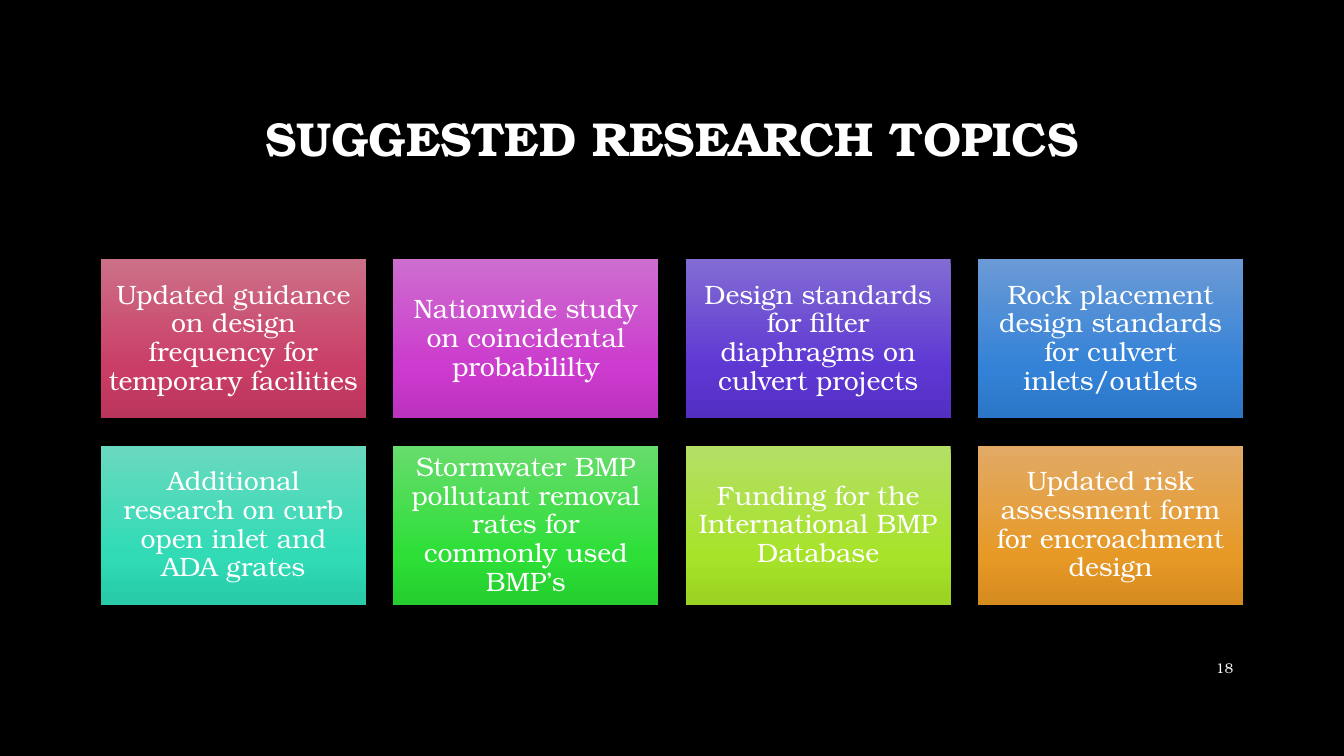
from copy import deepcopy
from pptx import Presentation
from pptx.dml.color import RGBColor as RGB
from pptx.enum.shapes import MSO_SHAPE as Shape
from pptx.enum.text import MSO_ANCHOR as Anchor, PP_ALIGN as Align
from pptx.oxml.ns import qn
from pptx.util import Inches, Pt

BLACK = RGB(0x00, 0x00, 0x00)
WHITE = RGB(0xFF, 0xFF, 0xFF)

# Card gradients: top, body, bottom
ROSE = RGB(0xCC, 0x70, 0x87), RGB(0xCA, 0x3D, 0x66), RGB(0xBA, 0x35, 0x5B)
PINK = RGB(0xCD, 0x6E, 0xCF), RGB(0xCC, 0x3A, 0xCE), RGB(0xBB, 0x32, 0xBE)
VIOLET = RGB(0x82, 0x6C, 0xD3), RGB(0x5E, 0x37, 0xD3), RGB(0x53, 0x2F, 0xC2)
BLUE = RGB(0x6B, 0x9A, 0xD6), RGB(0x33, 0x82, 0xD7), RGB(0x2B, 0x76, 0xC6)
TEAL = RGB(0x6A, 0xD9, 0xBF), RGB(0x30, 0xDB, 0xB6), RGB(0x28, 0xCA, 0xA7)
GREEN = RGB(0x68, 0xDC, 0x6D), RGB(0x2D, 0xDF, 0x37), RGB(0x25, 0xCE, 0x2E)
LIME = RGB(0xB4, 0xDF, 0x67), RGB(0xA7, 0xE3, 0x29), RGB(0x99, 0xD2, 0x22)
AMBER = RGB(0xE2, 0xAA, 0x66), RGB(0xE7, 0x99, 0x26), RGB(0xD6, 0x8B, 0x1F)
STOPS = 0, 0.69, 1

TOPICS = [
    ("Updated guidance on design frequency for temporary facilities", ROSE),
    ("Nationwide study on coincidental probabililty", PINK),
    ("Design standards for filter diaphragms on culvert projects", VIOLET),
    ("Rock placement design standards for culvert inlets/outlets", BLUE),
    ("Additional research on curb open inlet and ADA grates", TEAL),
    ("Stormwater BMP pollutant removal rates for commonly used BMP’s", GREEN),
    ("Funding for the International BMP Database", LIME),
    ("Updated risk assessment form for encroachment design", AMBER),
]

# Card grid, in inches
COLS = 4
LEFT, TOP = 1, 2.57
WIDE, HIGH = 2.63, 1.58
GAP = 0.27
SPAN = COLS * WIDE + (COLS - 1) * GAP


class Deck:
    font = "TeX Gyre Bonum"

    def __init__(self, prs):
        self.slide = prs.slides.add_slide(prs.slide_layouts[6])
        back = self.slide.background.fill
        back.solid()
        back.fore_color.rgb = BLACK

    def letter(self, shape, text, size, align=Align.CENTER, bold=False,
               inset=0.1, lead=0.9):
        frame = shape.text_frame
        frame.word_wrap = True
        frame.vertical_anchor = Anchor.MIDDLE
        frame.margin_left = frame.margin_right = Inches(inset)
        frame.margin_top = frame.margin_bottom = Inches(min(inset, 0.08))
        frame.text = text
        para = frame.paragraphs[0]
        para.alignment = align
        para.line_spacing = lead
        font = para.runs[0].font
        font.name, font.size, font.bold = self.font, Pt(size), bold
        font.color.rgb = WHITE

    def label(self, text, x, y, w, h, size, **style):
        box = self.slide.shapes.add_textbox(*map(Inches, (x, y, w, h)))
        self.letter(box, text, size, **style)

    def card(self, text, hues, col, row):
        x = LEFT + col * (WIDE + GAP)
        y = TOP + row * (HIGH + GAP)
        rect = self.slide.shapes.add_shape(
            Shape.RECTANGLE, *map(Inches, (x, y, WIDE, HIGH)))
        rect.shadow.inherit = False
        rect.line.fill.background()
        self.shade(rect, hues)
        self.letter(rect, text, 19, inset=0.08)

    def shade(self, rect, hues):
        fill = rect.fill
        fill.gradient()
        fill.gradient_angle = 270
        # The default gradient has two stops; add the third
        stops = rect.element.spPr.find(qn("a:gradFill")).find(qn("a:gsLst"))
        stops.append(deepcopy(stops[-1]))
        for stop, place, hue in zip(fill.gradient_stops, STOPS, hues):
            stop.position = place
            stop.color.rgb = hue


def main():
    prs = Presentation()
    prs.slide_width, prs.slide_height = Inches(13.33), Inches(7.5)
    deck = Deck(prs)

    # Title
    deck.label("SUGGESTED RESEARCH TOPICS", LEFT, 0.67, SPAN, 1.45, 34,
               bold=True)

    # Topic cards
    for i, (text, hues) in enumerate(TOPICS):
        row, col = divmod(i, COLS)
        deck.card(text, hues, col, row)

    # Page number
    deck.label("18", LEFT + SPAN - 0.82, 6.43, 0.82, 0.4, 10,
               align=Align.RIGHT, lead=1.0)

    prs.save("out.pptx")


if __name__ == "__main__":
    main()
